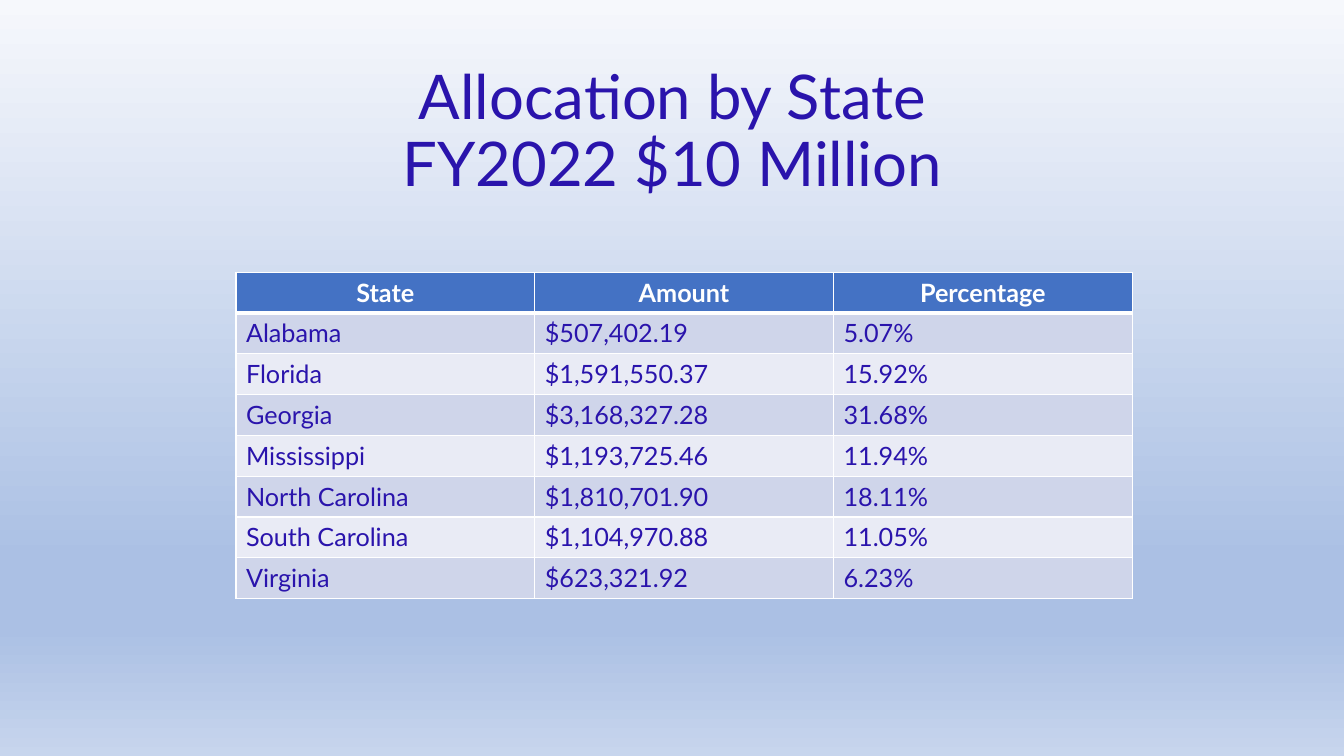
from lxml import etree
from pptx import Presentation
from pptx.dml.color import RGBColor
from pptx.enum.text import MSO_ANCHOR, MSO_AUTO_SIZE, PP_ALIGN
from pptx.oxml.ns import qn
from pptx.util import Inches, Pt

MIDDLE = MSO_ANCHOR.MIDDLE
NO_FIT = MSO_AUTO_SIZE.NONE
LEFT, CENTER = PP_ALIGN.LEFT, PP_ALIGN.CENTER

COLORS = {
    "ink": "2A14AC", "white": "FFFFFF", "head": "4472C4",
    "odd": "CFD5EA", "even": "E9EBF5",
    "pale": "F6F8FC", "blue": "ABC0E4", "base": "C7D5ED",
}
STOPS = [(0, "pale"), (74, "blue"), (83, "blue"), (100, "base")]
FONTS = {
    "title": {"name": "Lato", "size": Pt(44), "bold": False},
    "head": {"name": "Lato", "size": Pt(18), "bold": True},
    "body": {"name": "Lato", "size": Pt(18), "bold": False},
}
ROWS = [
    ("State", "Amount", "Percentage"),
    ("Alabama", "$507,402.19", "5.07%"),
    ("Florida", "$1,591,550.37", "15.92%"),
    ("Georgia", "$3,168,327.28", "31.68%"),
    ("Mississippi", "$1,193,725.46", "11.94%"),
    ("North Carolina", "$1,810,701.90", "18.11%"),
    ("South Carolina", "$1,104,970.88", "11.05%"),
    ("Virginia", "$623,321.92", "6.23%"),
]


def color(name):
    """Return the named colour."""
    return RGBColor.from_string(COLORS[name])


def write(para, text, style, ink, align):
    """Fill a paragraph with styled text."""
    para.text = text
    para.alignment = align
    for run in para.runs:
        for key, value in FONTS[style].items():
            setattr(run.font, key, value)
        run.font.color.rgb = color(ink)


def paint_back(slide):
    """Give the slide its vertical gradient."""
    fill = slide.background.fill
    fill.gradient()
    fill.gradient_angle = 270
    stops = slide.element.find(".//" + qn("a:gsLst"))
    for old in list(stops):
        stops.remove(old)
    for pos, name in STOPS:
        stop = etree.SubElement(stops, qn("a:gs"), pos=str(pos * 1000))
        etree.SubElement(stop, qn("a:srgbClr"), val=COLORS[name])


def add_title(slide, left, top, width, height):
    """Place the two-line title in its box."""
    title = slide.shapes.title
    box = {"left": left, "top": top, "width": width, "height": height}
    for key, value in box.items():
        setattr(title, key, Inches(value))
    frame = title.text_frame
    format = {"auto_size": NO_FIT, "vertical_anchor": MIDDLE, "word_wrap": True}
    for key, value in format.items():
        setattr(frame, key, value)
    para = frame.paragraphs[0]
    write(para, "Allocation by State\nFY2022 $10 Million", "title", "ink", CENTER)
    para.line_spacing = 0.9


def add_edges(cell, row):
    """Draw white cell borders, thicker below the header."""
    widths = {"L": 1, "R": 1, "T": 3 if row == 1 else 1, "B": 3 if row == 0 else 1}
    props = cell._tc.get_or_add_tcPr()
    for side, width in widths.items():
        line = etree.SubElement(props, qn("a:ln" + side), w=str(Pt(width)))
        solid = etree.SubElement(line, qn("a:solidFill"))
        etree.SubElement(solid, qn("a:srgbClr"), val=COLORS["white"])


def add_grid(slide, left, top, width, height):
    """Build the state table with equal rows and columns."""
    box = [Inches(value) for value in (left, top, width, height)]
    table = slide.shapes.add_table(len(ROWS), len(ROWS[0]), *box).table
    for col in table.columns:
        col.width = Inches(width / len(ROWS[0]))
    for row, texts in enumerate(ROWS):
        table.rows[row].height = Inches(height / len(ROWS))
        if row == 0:
            shade, look = "head", ("head", "white", CENTER)
        else:
            shade, look = ("odd" if row % 2 else "even"), ("body", "ink", LEFT)
        for col, text in enumerate(texts):
            cell = table.cell(row, col)
            add_edges(cell, row)
            cell.fill.solid()
            cell.fill.fore_color.rgb = color(shade)
            write(cell.text_frame.paragraphs[0], text, *look)


def main():
    """Build and save the slide."""
    deck = Presentation()
    deck.slide_width, deck.slide_height = Inches(13.33), Inches(7.5)
    slide = deck.slides.add_slide(deck.slide_layouts[5])
    paint_back(slide)
    add_title(slide, 0.92, 0.4, 11.5, 1.84)
    add_grid(slide, 2.34, 2.7, 8.89, 3.24)
    deck.save("out.pptx")


if __name__ == "__main__":
    main()
